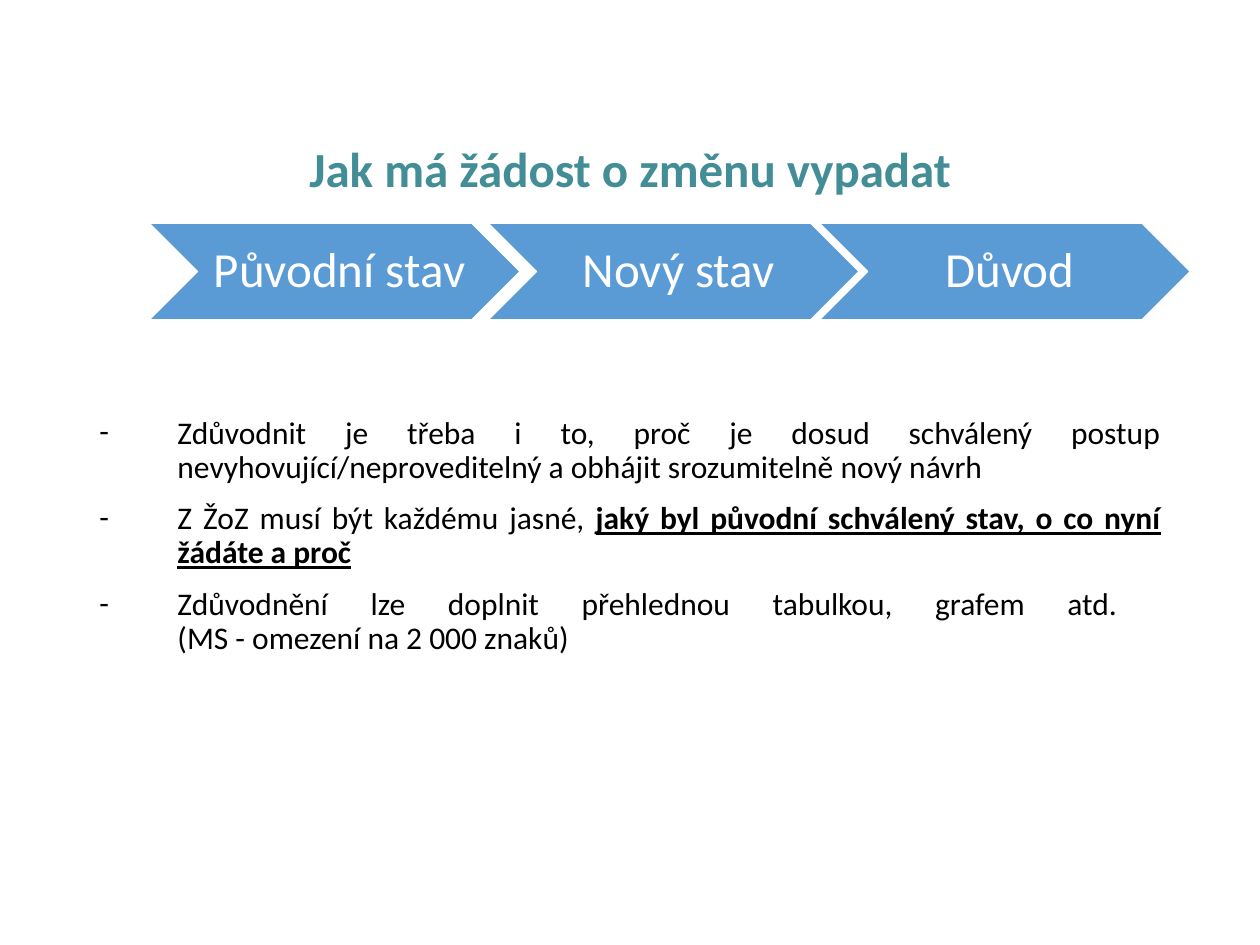
from pptx import Presentation
from pptx.dml.color import RGBColor
from pptx.enum.shapes import MSO_SHAPE
from pptx.enum.text import MSO_ANCHOR, PP_ALIGN
from pptx.oxml.ns import qn
from pptx.util import Inches, Pt
from lxml.etree import SubElement

COLORS = {"title": "428D96", "chevron": "5B9BD5", "light": "FFFFFF", "body": "000000"}
STEPS = [("Původní stav", 1.18), ("Nový stav", 3.87), ("Důvod", 6.5)]
BULLETS = [
    [("Zdůvodnit je třeba i to, proč je dosud schválený postup "
      "nevyhovující/neproveditelný a obhájit srozumitelně nový návrh", False)],
    [("Z ŽoZ musí být každému jasné, ", False),
     ("jaký byl původní schválený stav, o co nyní žádáte a proč", True)],
    [("Zdůvodnění lze doplnit přehlednou tabulkou, grafem atd. \v"
      "(MS - omezení na 2 000 znaků)", False)],
]


def style(font, size, color, bold=False):
    font.name = "Calibri"
    font.size = Pt(size)
    font.bold = bold
    font.color.rgb = RGBColor.from_string(COLORS[color])


deck = Presentation()
deck.slide_width, deck.slide_height = Inches(10), Inches(7.5)
page = deck.slides.add_slide(deck.slide_layouts[6])

title = page.shapes.add_textbox(Inches(0.69), Inches(0.87), Inches(8.62), Inches(0.98))
title.text_frame.word_wrap = True
title.text_frame.vertical_anchor = MSO_ANCHOR.MIDDLE
para = title.text_frame.paragraphs[0]
para.text = "Jak má žádost o změnu vypadat"
para.alignment = PP_ALIGN.CENTER
para.line_spacing = 0.9
style(para.runs[0].font, 28, "title", True)

for label, left in STEPS:
    chevron = page.shapes.add_shape(
        MSO_SHAPE.CHEVRON, Inches(left), Inches(1.77), Inches(2.95), Inches(0.77))
    chevron.shadow.inherit = False
    chevron.fill.solid()
    chevron.fill.fore_color.rgb = RGBColor.from_string(COLORS["chevron"])
    chevron.line.color.rgb = RGBColor.from_string(COLORS["light"])
    chevron.line.width = Pt(1)
    frame = chevron.text_frame
    frame.word_wrap = True
    frame.vertical_anchor = MSO_ANCHOR.MIDDLE
    frame.margin_left = Inches(0.12)
    frame.margin_right = frame.margin_top = frame.margin_bottom = Inches(0.04)
    para = frame.paragraphs[0]
    para.text = label
    para.alignment = PP_ALIGN.CENTER
    para.line_spacing = 0.9
    style(para.runs[0].font, 28, "light")

body = page.shapes.add_textbox(Inches(0.69), Inches(3.02), Inches(8.62), Inches(3.25))
frame = body.text_frame
frame.word_wrap = True
frame.vertical_anchor = MSO_ANCHOR.TOP
frame.margin_top = Inches(0.29)
for index, pieces in enumerate(BULLETS):
    para = frame.add_paragraph() if index else frame.paragraphs[0]
    para.text = "".join(text for text, strong in pieces[:1])
    for text, strong in pieces[1:]:
        para.add_run().text = text
    para.alignment = PP_ALIGN.JUSTIFY
    para.line_spacing = 0.9
    if index:
        para.space_before = Pt(10)
    properties = para._p.get_or_add_pPr()
    properties.set("marL", str(Inches(0.62)))
    properties.set("indent", str(-Inches(0.62)))
    SubElement(properties, qn("a:buFont"), typeface="Calibri")
    SubElement(properties, qn("a:buChar"), char="-")
    style(para.font, 18, "body")
    for span in para.runs:
        strong = (span.text, True) in pieces
        style(span.font, 18, "body", strong)
        span.font.underline = strong

deck.save("out.pptx")
